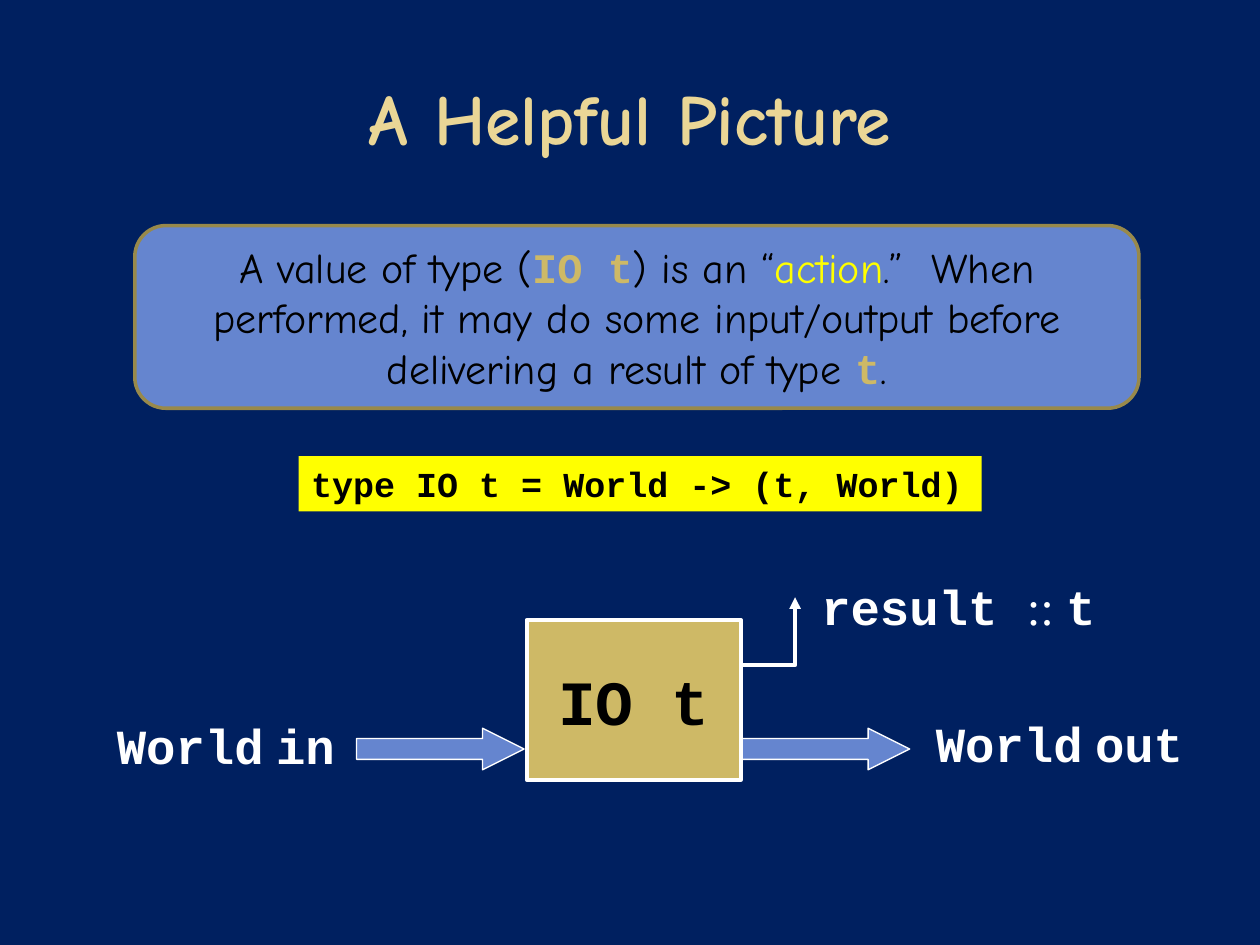
from dataclasses import dataclass

from lxml import etree
from pptx import Presentation
from pptx.dml.color import RGBColor
from pptx.enum.shapes import MSO_SHAPE
from pptx.enum.text import MSO_ANCHOR, MSO_AUTO_SIZE, PP_ALIGN
from pptx.oxml.ns import qn
from pptx.util import Inches, Pt

RECTANGLE = MSO_SHAPE.RECTANGLE
CALLOUT = MSO_SHAPE.ROUNDED_RECTANGULAR_CALLOUT
RIGHT_ARROW = MSO_SHAPE.RIGHT_ARROW
TOP, MIDDLE = MSO_ANCHOR.TOP, MSO_ANCHOR.MIDDLE
LEFT, CENTER = PP_ALIGN.LEFT, PP_ALIGN.CENTER
GROW = MSO_AUTO_SIZE.SHAPE_TO_FIT_TEXT
FIXED = MSO_AUTO_SIZE.NONE


@dataclass(frozen=True)
class Theme:
    navy: str = "002060"
    cream: str = "EAD696"
    blue: str = "6585CF"
    gold: str = "CEB966"
    bronze: str = "98894B"
    yellow: str = "FFFF00"
    white: str = "FFFFFF"
    black: str = "000000"
    prose: str = "Comic Neue"
    code: str = "Courier New"
    symbol: str = "Times New Roman"
    title_size: float = 41
    machine_size: float = 36
    label_size: float = 28
    body_size: float = 24
    code_size: float = 20


THEME = Theme()


@dataclass(frozen=True)
class Area:
    left: float
    top: float
    width: float
    height: float

    def lengths(self) -> tuple:
        return tuple(Inches(v) for v in (self.left, self.top, self.width, self.height))


@dataclass(frozen=True)
class Span:
    text: str
    font: str = THEME.code
    color: str = THEME.white
    bold: bool = True


@dataclass(frozen=True)
class Label:
    area: Area
    spans: tuple[Span, ...]
    line_spacing: float = 1.0


def rgb(color: str) -> RGBColor:
    return RGBColor.from_string(color)


def write(frame, spans: tuple[Span, ...], size: float, align=LEFT, anchor=TOP,
          wrap: bool = False, fit=GROW, line_spacing: float = 1.0) -> None:
    frame.word_wrap = wrap
    frame.auto_size = fit
    frame.vertical_anchor = anchor
    para = frame.paragraphs[0]
    para.alignment = align
    if line_spacing != 1.0:
        para.line_spacing = line_spacing
    for span in spans:
        run = para.add_run()
        run.text = span.text
        run.font.name = span.font
        run.font.size = Pt(size)
        run.font.bold = span.bold
        run.font.color.rgb = rgb(span.color)


def add_box(page, kind, area: Area, fill: str, line: str = "", line_width: float = 0,
            adjustments: tuple[float, ...] = ()):
    box = page.shapes.add_shape(kind, *area.lengths())
    box.shadow.inherit = False
    box.fill.solid()
    box.fill.fore_color.rgb = rgb(fill)
    if line:
        box.line.color.rgb = rgb(line)
        box.line.width = Pt(line_width)
    else:
        box.line.fill.background()
    for index, value in enumerate(adjustments):
        box.adjustments[index] = value
    return box


def add_label(page, label: Label) -> None:
    box = page.shapes.add_textbox(*label.area.lengths())
    write(box.text_frame, label.spans, THEME.label_size, line_spacing=label.line_spacing)


def add_bent_arrow(page, points: list[tuple[float, float]]) -> None:
    corners = [(Inches(x), Inches(y)) for x, y in points]
    builder = page.shapes.build_freeform(*corners[0])
    builder.add_line_segments(corners[1:], close=False)
    arrow = builder.convert_to_shape()
    arrow.shadow.inherit = False
    arrow.fill.background()
    arrow.line.color.rgb = rgb(THEME.white)
    arrow.line.width = Pt(2.25)
    etree.SubElement(arrow.line._get_or_add_ln(), qn("a:tailEnd"), type="triangle")


def add_title(page) -> None:
    title = page.shapes.title
    title.left, title.top, title.width, title.height = Area(0.5, 0.3, 9, 1.25).lengths()
    write(title.text_frame, (Span("A Helpful Picture", THEME.prose, THEME.cream),),
          THEME.title_size, CENTER, MIDDLE, wrap=True, fit=FIXED)


def add_definition(page) -> None:
    callout = add_box(page, CALLOUT, Area(1.07, 1.79, 7.97, 1.45), THEME.blue,
                      THEME.bronze, 2, (-0.24, 0.5, 0.17))
    spans = (
        Span("A value of type (", THEME.prose, THEME.black, False),
        Span("IO t", color=THEME.gold),
        Span(") is an “", THEME.prose, THEME.black, False),
        Span("action", THEME.prose, THEME.yellow, False),
        Span(".”  When performed, it may do some input/output before "
             "delivering a result of type ", THEME.prose, THEME.black, False),
        Span("t", color=THEME.gold),
        Span(".", THEME.prose, THEME.black, False),
    )
    write(callout.text_frame, spans, THEME.body_size, CENTER, MIDDLE, wrap=True)
    signature = add_box(page, RECTANGLE, Area(2.37, 3.62, 5.42, 0.44), THEME.yellow)
    write(signature.text_frame,
          (Span("type IO t = World -> (t, World)", color=THEME.black),), THEME.code_size)


def add_diagram(page) -> None:
    machine = add_box(page, RECTANGLE, Area(4.18, 4.92, 1.7, 1.27), THEME.gold,
                      THEME.white, 2.25)
    write(machine.text_frame, (Span("IO t", color=THEME.black),), THEME.machine_size,
          CENTER, MIDDLE, fit=FIXED)
    add_bent_arrow(page, [(5.89, 5.28), (6.31, 5.28), (6.31, 4.74)])
    for left in (2.83, 5.89):
        add_box(page, RIGHT_ARROW, Area(left, 5.78, 1.33, 0.33), THEME.blue,
                THEME.white, 0.75, (0.5, 1))
    gap = Span(" ", THEME.symbol)
    labels = (
        Label(Area(7.33, 5.61, 2.2, 0.57), (Span("World"), gap, Span("out"))),
        Label(Area(0.83, 5.76, 1.96, 0.45), (Span("World"), gap, Span("in")), 0.7),
        Label(Area(6.42, 4.53, 2.4, 0.57),
              (Span("result "), Span(":: ", THEME.symbol, bold=False), Span("t"))),
    )
    for label in labels:
        add_label(page, label)


def main() -> None:
    deck = Presentation()
    deck.slide_width, deck.slide_height = Inches(10), Inches(7.5)
    page = deck.slides.add_slide(deck.slide_layouts[5])
    page.background.fill.solid()
    page.background.fill.fore_color.rgb = rgb(THEME.navy)
    add_title(page)
    add_definition(page)
    add_diagram(page)
    deck.save("out.pptx")


if __name__ == "__main__":
    main()
